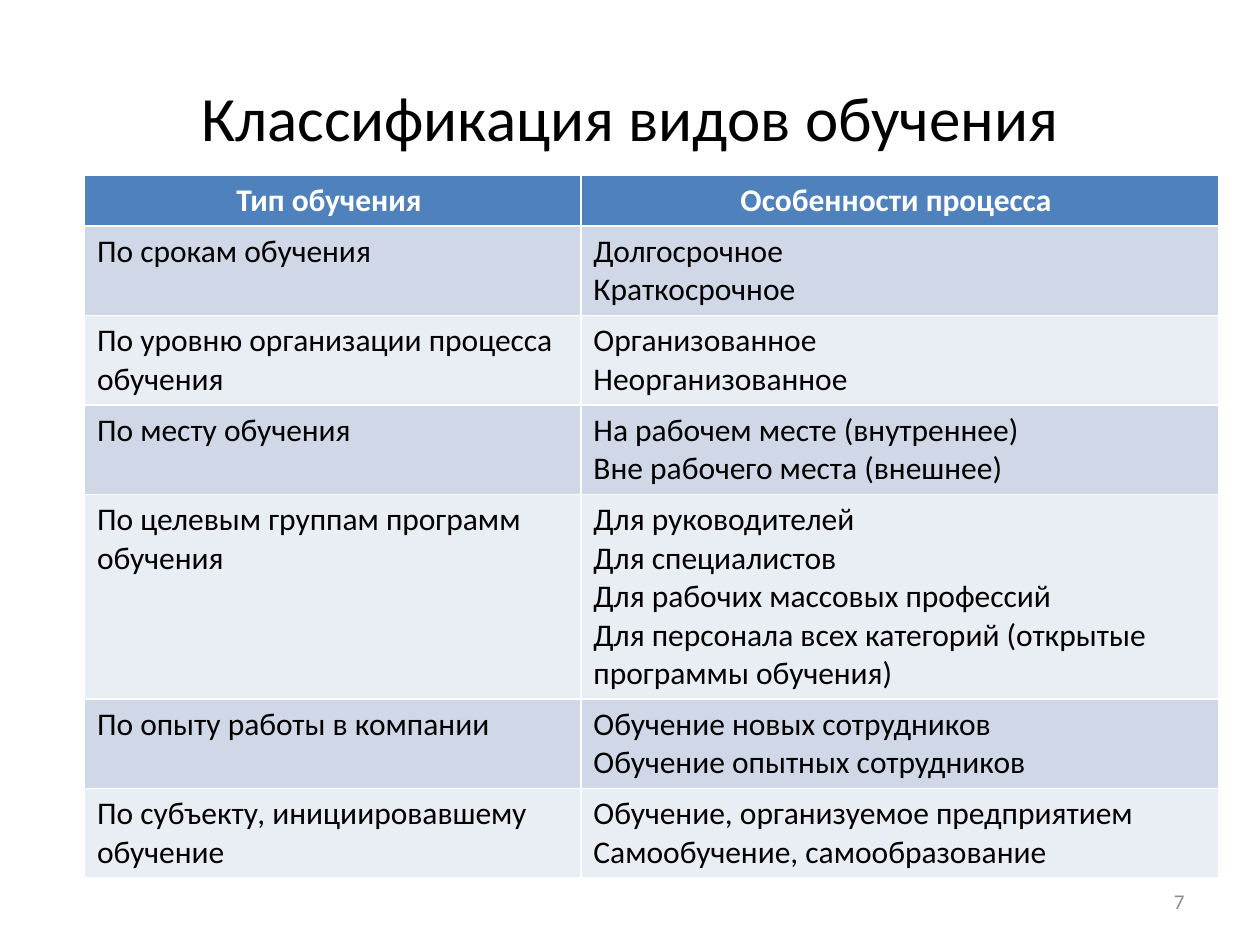
from pptx import Presentation
from pptx.dml.color import RGBColor
from pptx.enum.text import MSO_ANCHOR, PP_ALIGN
from pptx.util import Inches, Pt

FONT = "Calibri"
COLORS = {"black": "000000", "white": "FFFFFF", "gray": "8C8C8C",
          "head": "4F81BD", "odd": "D0D8E8", "even": "E9EDF4"}
HEADS = ["Тип обучения ", "Особенности процесса "]
# Each row: type, features, number of text lines it takes
ROWS = [
    ("По срокам обучения", ["Долгосрочное", "Краткосрочное"], 2),
    ("По уровню организации процесса обучения",
     ["Организованное", "Неорганизованное"], 2),
    ("По месту обучения",
     ["На рабочем месте (внутреннее)", "Вне рабочего места (внешнее)"], 2),
    ("По целевым группам программ обучения",
     ["Для руководителей", "Для специалистов",
      "Для рабочих массовых профессий",
      "Для персонала всех категорий (открытые программы обучения)"], 5),
    ("По опыту работы в компании",
     ["Обучение новых сотрудников", "Обучение опытных сотрудников"], 2),
    ("По субъекту, инициировавшему обучение",
     ["Обучение, организуемое предприятием Самообучение, самообразование"], 2),
]


def write(frame, lines, size, color="black", align=PP_ALIGN.LEFT, bold=False):
    for i, line in enumerate(lines):
        para = frame.paragraphs[0] if i == 0 else frame.add_paragraph()
        para.alignment = align
        run = para.add_run()
        run.text = line
        font = run.font
        font.name, font.size, font.bold = FONT, Pt(size), bold
        font.color.rgb = RGBColor.from_string(COLORS[color])


def add_label(slide, box, text, size, color, align):
    frame = slide.shapes.add_textbox(*map(Inches, box)).text_frame
    frame.word_wrap = True
    frame.vertical_anchor = MSO_ANCHOR.MIDDLE
    write(frame, [text], size, color, align)


def fill_cell(cell, lines, fill, **style):
    cell.fill.solid()
    cell.fill.fore_color.rgb = RGBColor.from_string(COLORS[fill])
    write(cell.text_frame, lines, 18, **style)


def add_grid(slide, left, top, widths):
    # Row height: margins plus one step per text line
    heights = [0.1 + 0.305 * n for n in [1] + [row[2] for row in ROWS]]
    box = (left, top, sum(widths), sum(heights))
    table = slide.shapes.add_table(
        len(heights), len(widths), *map(Inches, box)).table
    for col, width in zip(table.columns, widths):
        col.width = Inches(width)
    for row, height in zip(table.rows, heights):
        row.height = Inches(height)

    # Header
    for c, head in enumerate(HEADS):
        fill_cell(table.cell(0, c), [head], "head", color="white",
                  align=PP_ALIGN.CENTER, bold=True)
    # Body in alternating bands
    for r, (kind, traits, _) in enumerate(ROWS, 1):
        band = "odd" if r % 2 else "even"
        fill_cell(table.cell(r, 0), [kind], band)
        fill_cell(table.cell(r, 1), traits, band)


def main():
    deck = Presentation()
    deck.slide_width, deck.slide_height = Inches(10), Inches(7.5)
    slide = deck.slides.add_slide(deck.slide_layouts[6])
    add_label(slide, (0.5, 0.3, 9, 1.25), "Классификация видов обучения",
              36, "black", PP_ALIGN.CENTER)
    add_grid(slide, 0.67, 1.39, [3.94, 5.06])
    # Page number
    add_label(slide, (7.17, 6.95, 2.33, 0.4), "7", 12, "gray", PP_ALIGN.RIGHT)
    deck.save("out.pptx")


if __name__ == "__main__":
    main()
